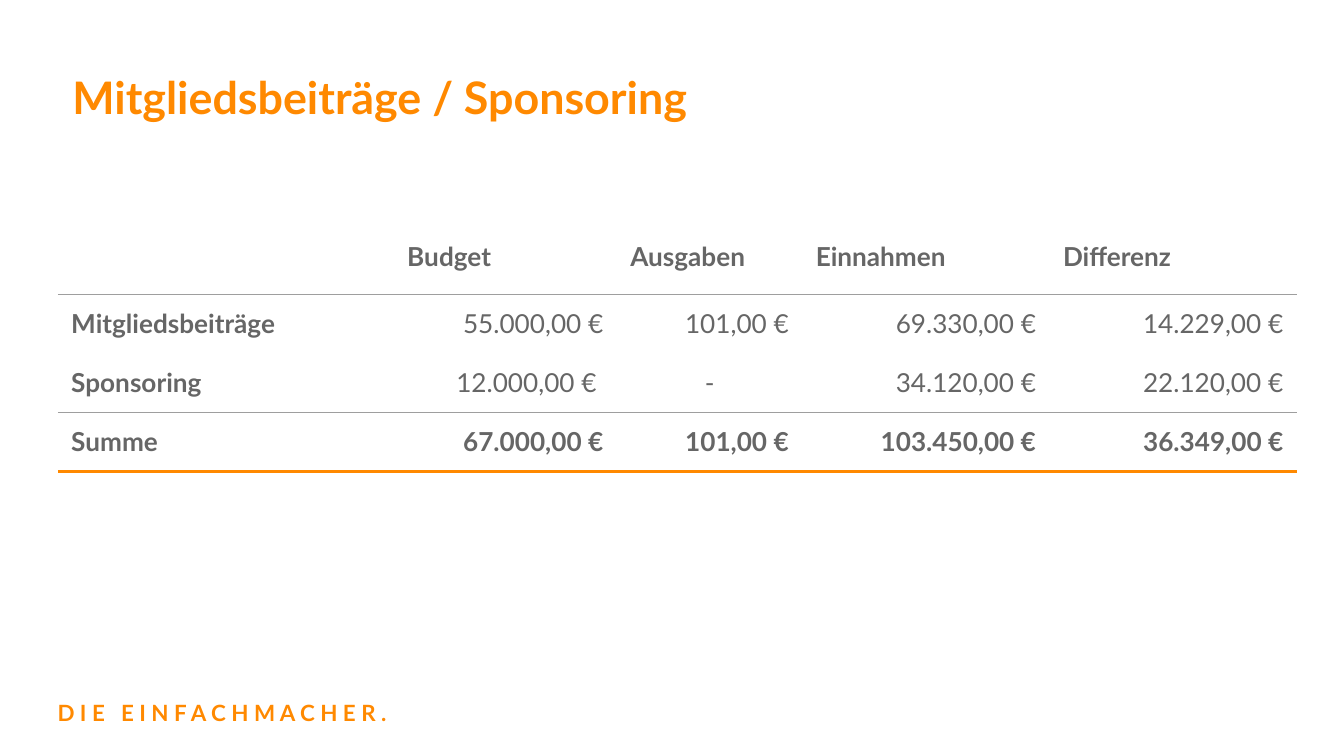
from dataclasses import dataclass

from lxml import etree
from pptx import Presentation
from pptx.dml.color import RGBColor
from pptx.enum.text import PP_ALIGN
from pptx.oxml.ns import qn
from pptx.util import Inches, Pt


@dataclass(frozen=True)
class Theme:
    face: str = "Lato"
    accent: str = "FF8900"
    ink: str = "666666"
    rule: str = "9E9E9E"
    title: int = 24
    body: int = 14
    foot: int = 12
    thin: float = 0.75
    thick: float = 2.25
    inset: float = 0.1
    gap: float = 5.7


THEME = Theme()
COLS = (2.5, 1.66, 1.38, 1.84, 1.84)
ROWS = (0.5, 0.44, 0.44, 0.44)
DATA = (
    ("", "Budget", "Ausgaben", "Einnahmen", "Differenz"),
    ("Mitgliedsbeiträge", "55.000,00 €", "101,00 €", "69.330,00 €", "14.229,00 €"),
    ("Sponsoring", "12.000,00 € ", "-", "34.120,00 €", "22.120,00 €"),
    ("Summe", "67.000,00 €", "101,00 €", "103.450,00 €", "36.349,00 €"),
)
THIN = (THEME.rule, THEME.thin)
# Horizontal rules, keyed by the number of rows above them
RULES = {1: THIN, 3: THIN, 4: (THEME.accent, THEME.thick)}


def style(para, size, color, bold):
    font = para.font
    font.name = THEME.face
    font.size = Pt(size)
    font.bold = bold
    font.color.rgb = RGBColor.from_string(color)


def pad(item):
    """Give a cell or text frame equal margins on all sides."""
    for side in ("left", "right", "top", "bottom"):
        setattr(item, f"margin_{side}", Inches(THEME.inset))


def add_label(slide, box, parts, size):
    """Add a text box with one run for each part."""
    frame = slide.shapes.add_textbox(*map(Inches, box)).text_frame
    frame.word_wrap = True
    pad(frame)
    para = frame.paragraphs[0]
    for part in parts:
        para.add_run().text = part
    style(para, size, THEME.accent, True)
    return para


def track(run, points):
    """Widen the space after each letter of a run."""
    run._r.get_or_add_rPr().set("spc", str(round(points * 100)))


def set_edges(cell, top, bottom):
    """Draw the given edges, each a colour and width, and hide the rest."""
    props = cell._tc.get_or_add_tcPr()
    edges = (("lnL", None), ("lnR", None), ("lnT", top), ("lnB", bottom))
    for place, (tag, rule) in enumerate(edges):
        line = etree.Element(qn(f"a:{tag}"))
        if rule:
            color, width = rule
            line.set("w", str(Pt(width)))
            fill = etree.SubElement(line, qn("a:solidFill"))
            etree.SubElement(fill, qn("a:srgbClr"), val=color)
        else:
            etree.SubElement(line, qn("a:noFill"))
        props.insert(place, line)


def fill_cell(cell, words, row, col):
    cell.fill.background()
    pad(cell)
    set_edges(cell, RULES.get(row), RULES.get(row + 1))
    para = cell.text_frame.paragraphs[0]
    para.text = words
    if words == "-":
        para.alignment = PP_ALIGN.CENTER
    elif row and col:
        para.alignment = PP_ALIGN.RIGHT
    bold = row in (0, len(DATA) - 1) or col == 0
    style(para, THEME.body, THEME.ink, bold)


def add_budget(slide, left, top):
    size = map(Inches, (left, top, sum(COLS), sum(ROWS)))
    table = slide.shapes.add_table(len(ROWS), len(COLS), *size).table
    table.first_row = table.horz_banding = False
    for col, width in zip(table.columns, COLS):
        col.width = Inches(width)
    for row, height in zip(table.rows, ROWS):
        row.height = Inches(height)
    for row, line in enumerate(DATA):
        for col, words in enumerate(line):
            fill_cell(table.cell(row, col), words, row, col)


def main():
    deck = Presentation()
    deck.slide_width = Inches(10)
    deck.slide_height = deck.slide_width * 9 // 16
    slide = deck.slides.add_slide(deck.slide_layouts[6])

    motto = ("D I E", " ", "E I N F A C H M A C H E R .")
    foot = add_label(slide, (0.33, 5.1, 3.1, 0.41), motto, THEME.foot)
    track(foot.runs[1], THEME.gap)
    title = add_label(
        slide, (0.44, 0.36, 9.2, 0.64), ["Mitgliedsbeiträge / Sponsoring"], THEME.title
    )
    title.line_spacing = 1.15
    add_budget(slide, 0.43, 1.69)

    deck.save("out.pptx")


if __name__ == "__main__":
    main()
